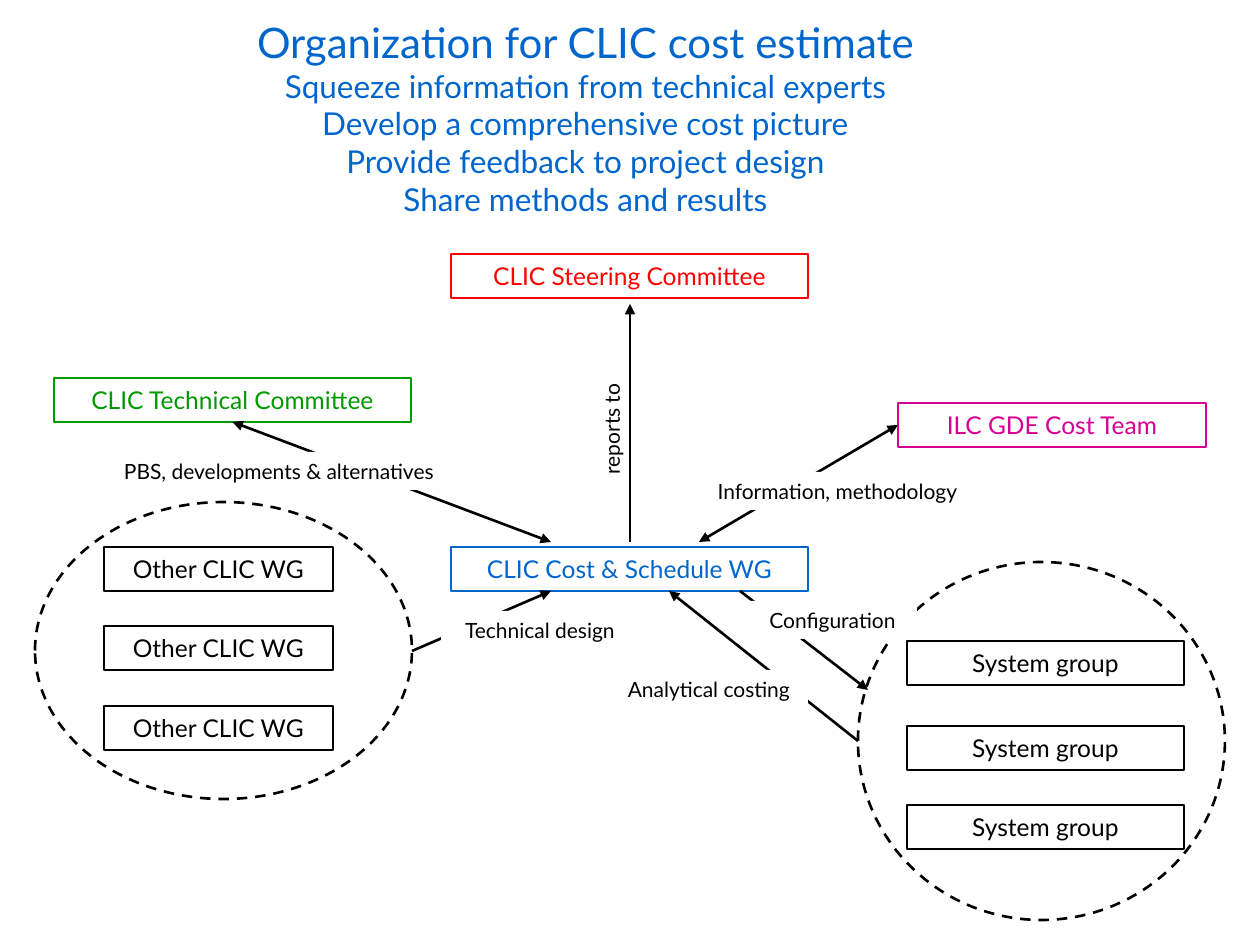
from lxml.etree import SubElement
from pptx import Presentation
from pptx.dml.color import RGBColor
from pptx.enum.dml import MSO_LINE_DASH_STYLE as DASH
from pptx.enum.shapes import MSO_CONNECTOR as CONN, MSO_SHAPE as SHAPE
from pptx.enum.text import MSO_ANCHOR as ANCHOR, PP_ALIGN as ALIGN
from pptx.oxml.ns import qn
from pptx.util import Pt

PX = 914400 / 126
FONT = "Lato"
COLORS = {"blue": "0066CC", "red": "FF0000", "green": "009900",
          "pink": "D60093", "black": "000000", "white": "FFFFFF"}

TITLE = [("Organization for CLIC cost estimate", 24),
         ("Squeeze information from technical experts", 18),
         ("Develop a comprehensive cost picture", 18),
         ("Provide feedback to project design", 18),
         ("Share methods and results", 18)]
TITLE_AREA = (144, 0, 883, 234)

# Boxes: text, colour, left, top, width
BOX_H, LABEL_H = 44, 38
BOXES = [("CLIC Cost & Schedule WG", "blue", 451, 547, 357),
         ("CLIC Steering Committee", "red", 451, 254, 357),
         ("CLIC Technical Committee", "green", 54, 378, 357),
         ("ILC GDE Cost Team", "pink", 898, 403, 308)]
BOXES += [("Other CLIC WG", "black", 104, top, 229) for top in (547, 626, 706)]
BOXES += [("System group", "black", 907, top, 277) for top in (641, 726, 805)]

ELLIPSES = [(858, 562, 367, 358), (35, 502, 377, 297)]

# Arrows: start, end, arrowheads, joined box and side at start, at end
ARROWS = [
    ((630, 542), (630, 304), ["tail"], None, None),
    ((233, 423), (551, 542), ["head", "tail"],
     ("CLIC Technical Committee", 2), None),
    ((412, 651), (551, 591), ["tail"], None, None),
    ((740, 591), (868, 690), ["tail"], None, None),
    ((858, 741), (669, 591), ["tail"], None, None),
    ((699, 542), (898, 423), ["head", "tail"],
     None, ("ILC GDE Cost Team", 1)),
]

# Labels: text, left, top, width
LABELS = [("PBS, developments & alternatives", 105, 452, 348),
          ("Configuration", 748, 601, 169),
          ("Analytical costing", 610, 670, 198),
          ("Information, methodology", 689, 472, 297),
          ("Technical design", 441, 611, 198)]
TURNED_LABEL = ("reports to", 527, 410, 169)


def px(*values):
    return [round(v * PX) for v in values]


def rgb(name):
    return RGBColor.from_string(COLORS[name])


def write(sp, lines, color):
    tf = sp.text_frame
    tf.word_wrap = True
    tf.vertical_anchor = ANCHOR.MIDDLE
    tf.text = "\n".join(text for text, _ in lines)
    for p, (_, size) in zip(tf.paragraphs, lines):
        p.alignment = ALIGN.CENTER
        font = p.runs[0].font
        font.name, font.size = FONT, Pt(size)
        font.color.rgb = rgb(color)


def add_shape(kind, area, line=None, fill=None):
    sp = s.shapes.add_shape(kind, *px(*area))
    sp.shadow.inherit = False
    if fill:
        sp.fill.solid()
        sp.fill.fore_color.rgb = rgb(fill)
    else:
        sp.fill.background()
    if line:
        sp.line.color.rgb = rgb(line)
        sp.line.width = Pt(1.5)
    else:
        sp.line.fill.background()
    return sp


def add_arrow(start, end, heads, start_join, end_join):
    cn = s.shapes.add_connector(CONN.STRAIGHT, *px(*start, *end))
    cn.line.color.rgb = rgb("black")
    cn.line.width = Pt(1.5)
    ln = cn.line._get_or_add_ln()
    for head in heads:
        SubElement(ln, qn(f"a:{head}End"), type="triangle")
    SubElement(cn._element.spPr, qn("a:effectLst"))
    if start_join:
        cn.begin_connect(boxes[start_join[0]], start_join[1])
    if end_join:
        cn.end_connect(boxes[end_join[0]], end_join[1])


prs = Presentation()
prs.slide_width, prs.slide_height = px(1260, 945)
s = prs.slides.add_slide(prs.slide_layouts[6])

# Title
write(s.shapes.add_textbox(*px(*TITLE_AREA)), TITLE, "blue")

# Committees and groups
boxes = {}
for text, color, left, top, width in BOXES:
    sp = add_shape(SHAPE.RECTANGLE, (left, top, width, BOX_H), line=color)
    write(sp, [(text, 14)], color)
    boxes[text] = sp

# Dashed outlines around the groups
for area in ELLIPSES:
    add_shape(SHAPE.OVAL, area, line="black").line.dash_style = DASH.DASH

# Arrows, then the labels that cover them
for arrow in ARROWS:
    add_arrow(*arrow)

for text, left, top, width in LABELS:
    sp = add_shape(SHAPE.RECTANGLE, (left, top, width, LABEL_H), fill="white")
    write(sp, [(text, 12)], "black")

text, *place = TURNED_LABEL
sp = s.shapes.add_textbox(*px(*place, LABEL_H))
sp.rotation = 270
write(sp, [(text, 12)], "black")

prs.save("out.pptx")
